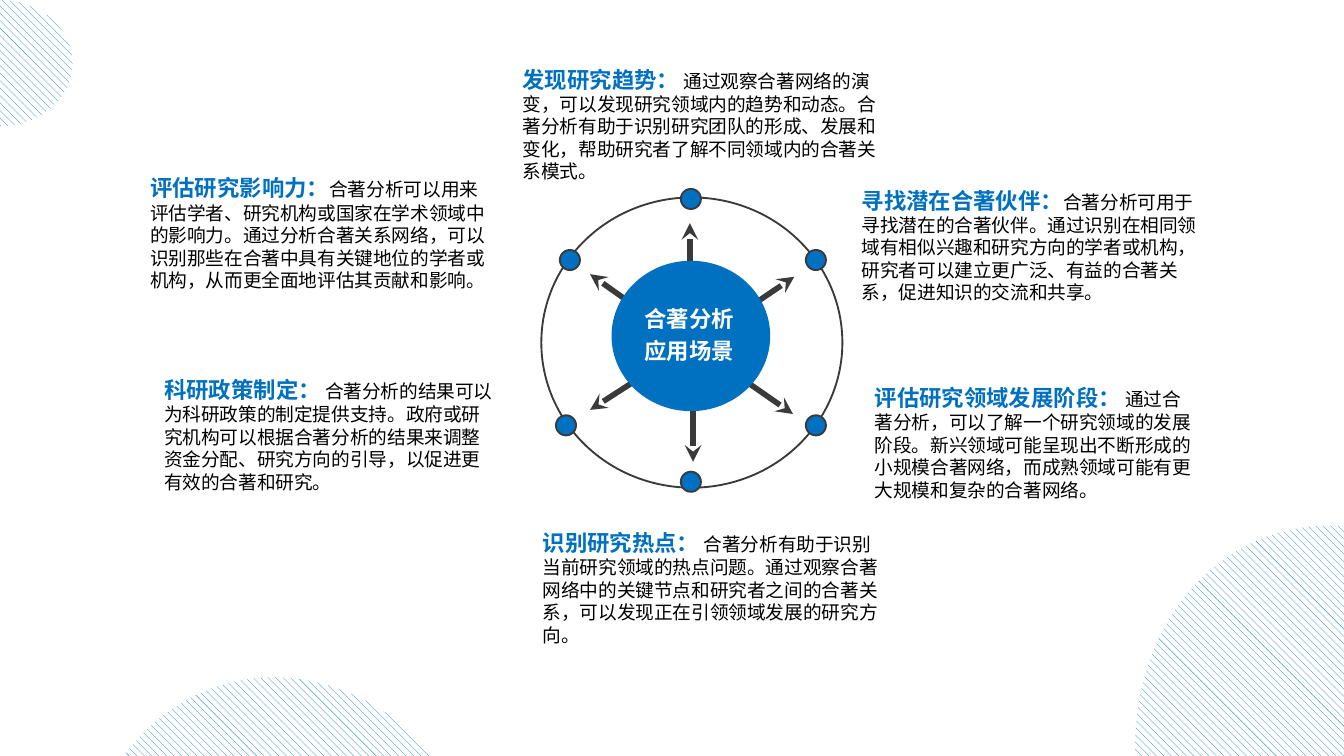
from dataclasses import dataclass

from lxml import etree
from pptx import Presentation
from pptx.dml.color import RGBColor
from pptx.enum.dml import MSO_PATTERN
from pptx.enum.shapes import MSO_CONNECTOR, MSO_SHAPE
from pptx.enum.text import MSO_ANCHOR, MSO_AUTO_SIZE, PP_ALIGN
from pptx.oxml.ns import qn
from pptx.util import Pt

OVAL = MSO_SHAPE.OVAL
STRAIGHT = MSO_CONNECTOR.STRAIGHT
HATCH = MSO_PATTERN.WIDE_DOWNWARD_DIAGONAL
TOP = MSO_ANCHOR.TOP
MIDDLE = MSO_ANCHOR.MIDDLE
LEFT = PP_ALIGN.LEFT
FIXED = MSO_AUTO_SIZE.NONE

BLUE, DARK, WHITE, BLACK = "0070C0", "3A3A3A", "FFFFFF", "000000"
LATIN, HAN = "Arial", "Noto Sans CJK SC"
DOT = 10.8


@dataclass
class Box:
    left: float
    top: float
    width: float
    height: float
    turn: float = 0


@dataclass
class Arrow:
    x1: float
    y1: float
    x2: float
    y2: float


@dataclass
class Note:
    box: Box
    head: str
    body: str


BLOBS = [
    Box(26.6, 379.4, 257, 221.8, 75),
    Box(591.8, 298.1, 257, 221.8, 75),
    Box(-39.6, 0, 78.5, 67.7),
]
RING = Box(290, 105.8, 161.3, 155.5)
HUB = Box(327.6, 139.7, 85, 80.6)
LABEL = Box(338, 158.1, 64.8, 39.6)
DOTS = [(431.7, 222.5), (431.7, 133.9), (364.7, 101.2),
        (297.8, 222.5), (299.9, 133.9), (364.7, 252.7)]
ARROWS = [
    Arrow(371.3, 203, 371.3, 247.4),
    Arrow(370.8, 184.3, 424.8, 221.8),
    Arrow(372.2, 184.3, 425.5, 148.3),
    Arrow(369.6, 183.6, 369.6, 119.5),
    Arrow(368.6, 184.3, 316.1, 146.9),
    Arrow(368.6, 185.8, 316.1, 219.6),
]
NOTES = [
    Note(Box(73.4, 90, 199.4, 71.3), "评估研究影响力：",
         "合著分析可以用来评估学者、研究机构或国家在学术领域中的影响力。通过分析合著关系网络，"
         "可以识别那些在合著中具有关键地位的学者或机构，从而更全面地评估其贡献和影响。"),
    Note(Box(272.9, 31.7, 210.2, 64.1), "发现研究趋势：",
         " 通过观察合著网络的演变，可以发现研究领域内的趋势和动态。合著分析有助于识别研究团队的"
         "形成、发展和变化，帮助研究者了解不同领域内的合著关系模式。"),
    Note(Box(80.9, 198, 191.5, 69.8), "科研政策制定：",
         " 合著分析的结果可以为科研政策的制定提供支持。政府或研究机构可以根据合著分析的结果来"
         "调整资金分配、研究方向的引导，以促进更有效的合著和研究。"),
    Note(Box(454.5, 96.5, 193.7, 69.8), "寻找潜在合著伙伴：",
         "合著分析可用于寻找潜在的合著伙伴。通过识别在相同领域有相似兴趣和研究方向的学者或机构，"
         "研究者可以建立更广泛、有益的合著关系，促进知识的交流和共享。"),
    Note(Box(461.5, 202.3, 185, 69.8), "评估研究领域发展阶段：",
         " 通过合著分析，可以了解一个研究领域的发展阶段。新兴领域可能呈现出不断形成的小规模合著"
         "网络，而成熟领域可能有更大规模和复杂的合著网络。"),
    Note(Box(283.7, 280.1, 199.4, 69.8), "识别研究热点：",
         " 合著分析有助于识别当前研究领域的热点问题。通过观察合著网络中的关键节点和研究者之间的"
         "合著关系，可以发现正在引领领域发展的研究方向。"),
]


def paint(color, code: str) -> None:
    color.rgb = RGBColor.from_string(code)


def frame(box: Box) -> list:
    return [Pt(v) for v in (box.left, box.top, box.width, box.height)]


def add_oval(slide, box: Box, fill: str = "", line: str = ""):
    oval = slide.shapes.add_shape(OVAL, *frame(box))
    oval.shadow.inherit = False
    oval.rotation = box.turn
    if fill:
        oval.fill.solid()
        paint(oval.fill.fore_color, fill)
    else:
        oval.fill.background()
    if line:
        paint(oval.line.color, line)
        oval.line.width = Pt(1)
    else:
        oval.line.fill.background()
    return oval


def add_blob(slide, box: Box) -> None:
    fill = add_oval(slide, box).fill
    fill.patterned()
    fill.pattern = HATCH
    paint(fill.fore_color, BLUE)
    paint(fill.back_color, WHITE)


def add_arrow(slide, arrow: Arrow) -> None:
    ends = [Pt(v) for v in (arrow.x1, arrow.y1, arrow.x2, arrow.y2)]
    link = slide.shapes.add_connector(STRAIGHT, *ends)
    paint(link.line.color, DARK)
    link.line.width = Pt(3)
    etree.SubElement(link.line._get_or_add_ln(), qn("a:tailEnd"), type="stealth")
    etree.SubElement(link._element.spPr, qn("a:effectLst"))


def add_run(para, text: str, size: float, code: str, font: str, bold: bool) -> None:
    run = para.add_run()
    run.text = text
    run.font.size = Pt(size)
    run.font.bold = bold
    run.font.name = font
    paint(run.font.color, code)
    etree.SubElement(run.font._element, qn("a:ea"), typeface=HAN)


def add_note(slide, note: Note) -> None:
    text = slide.shapes.add_textbox(*frame(note.box)).text_frame
    text.word_wrap = True
    text.vertical_anchor = TOP
    para = text.paragraphs[0]
    para._p.get_or_add_pPr().set("hangingPunct", "0")
    add_run(para, note.head, 12, BLUE, LATIN, True)
    add_run(para, note.body, 10, BLACK, HAN, False)


def set_title(slide, box: Box, words: str) -> None:
    title = slide.shapes.title
    title.left, title.top, title.width, title.height = frame(box)
    text = title.text_frame
    text.word_wrap = True
    text.auto_size = FIXED
    text.vertical_anchor = MIDDLE
    para = text.paragraphs[0]
    para.alignment = LEFT
    para.line_spacing = 1.2
    add_run(para, words, 12, WHITE, HAN, True)
    slide.shapes._spTree.append(title._element)


def main() -> None:
    deck = Presentation()
    deck.slide_width, deck.slide_height = Pt(720), Pt(405)
    slide = deck.slides.add_slide(deck.slide_layouts[5])
    for blob in BLOBS:
        add_blob(slide, blob)
    add_oval(slide, RING, line=DARK)
    for left, top in DOTS:
        add_oval(slide, Box(left, top, DOT, DOT), BLUE, DARK)
    for arrow in ARROWS:
        add_arrow(slide, arrow)
    add_oval(slide, HUB, BLUE)
    set_title(slide, LABEL, "合著分析应用场景")
    for note in NOTES:
        add_note(slide, note)
    deck.save("out.pptx")


if __name__ == "__main__":
    main()
